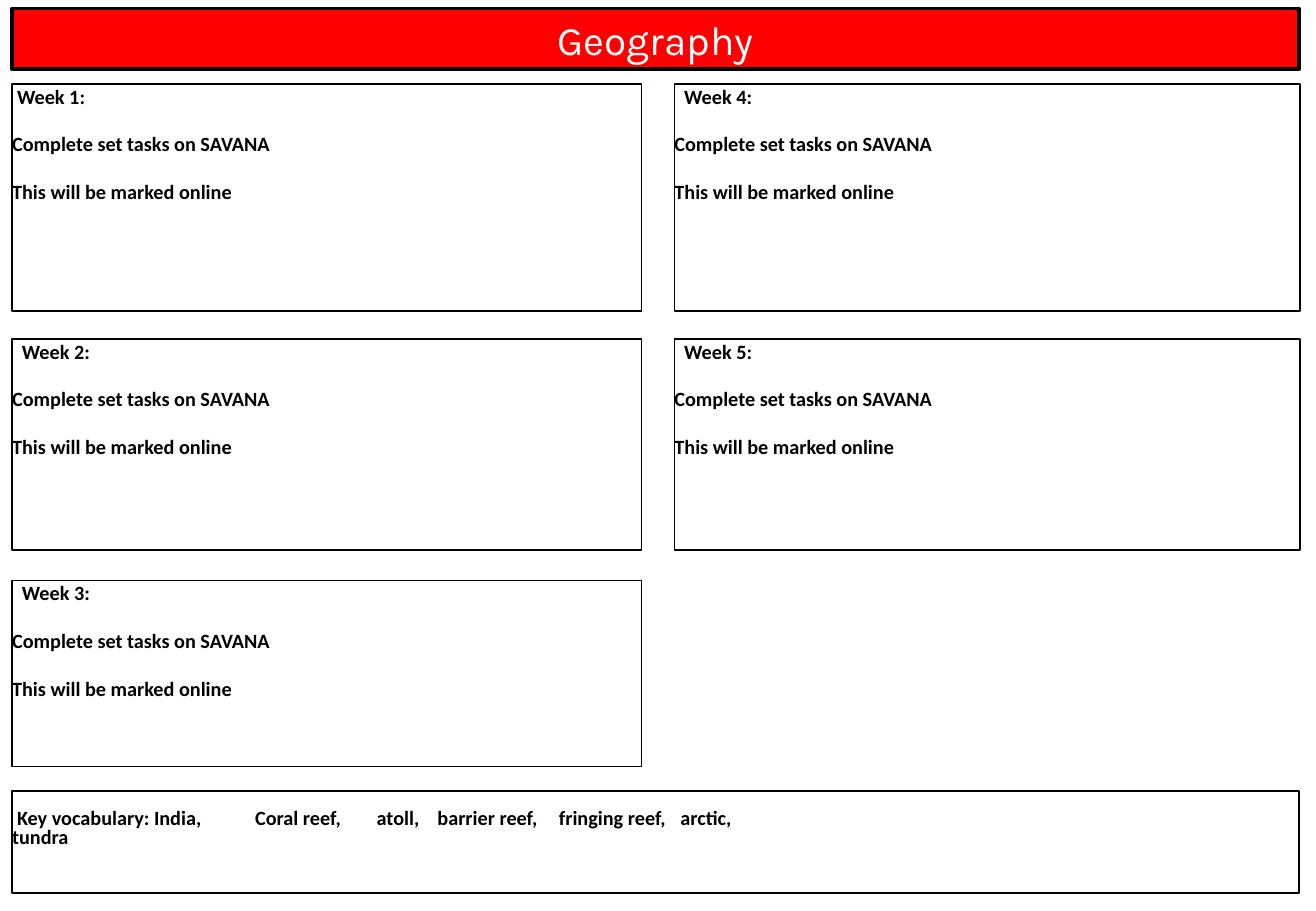
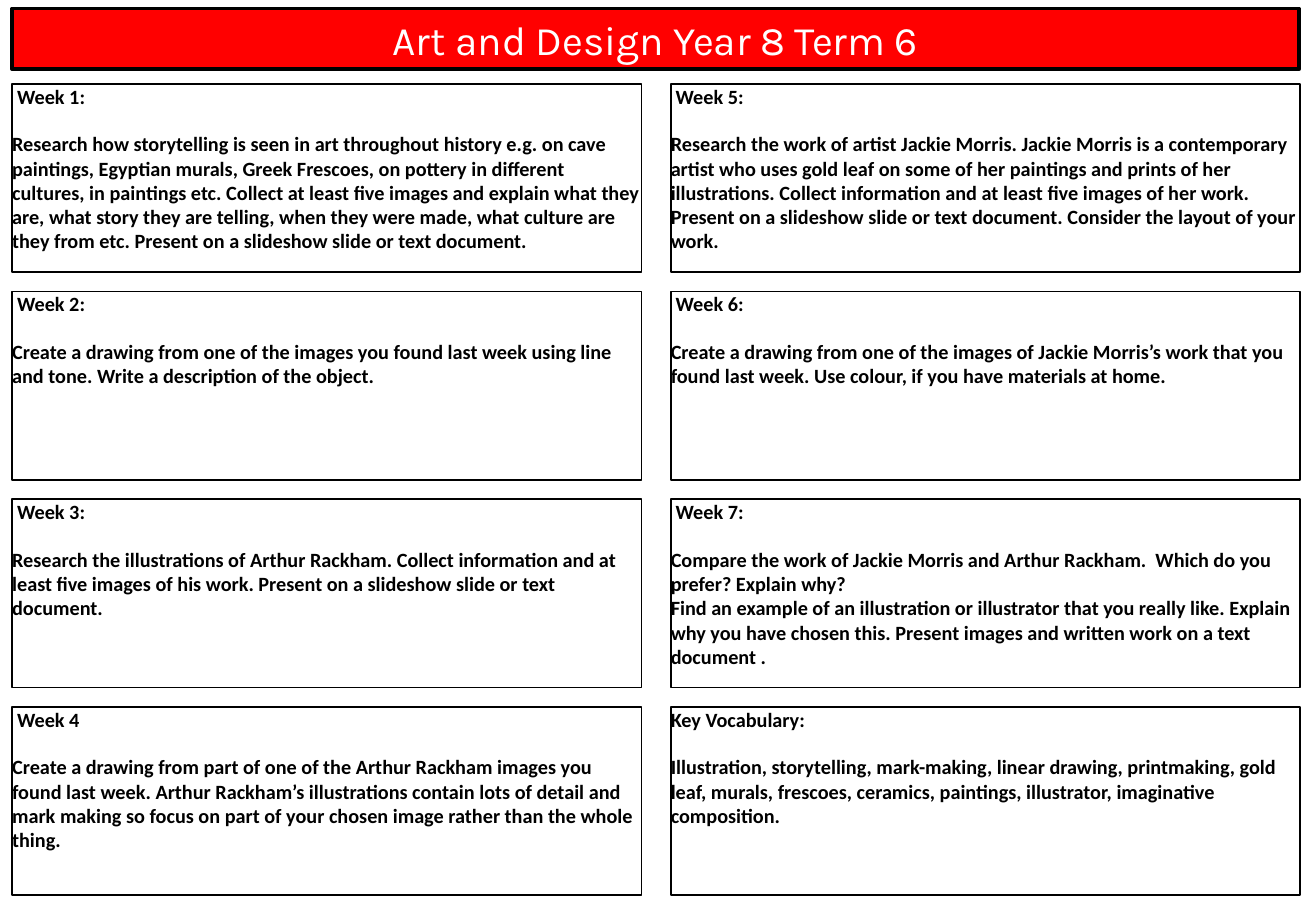
from pptx import Presentation
from pptx.dml.color import RGBColor
from pptx.enum.shapes import MSO_SHAPE as Shape
from pptx.enum.text import MSO_ANCHOR as Anchor, MSO_AUTO_SIZE as AutoSize, PP_ALIGN as Align
from pptx.util import Inches, Pt
from lxml import etree

BLACK = RGBColor(0x00, 0x00, 0x00)
RED = RGBColor(0xFF, 0x00, 0x00)
WHITE = RGBColor(0xFF, 0xFF, 0xFF)

TITLE_ONLY = 5
LEFT, FULL_WIDTH, COLUMN_WIDTH = 0.1, 10.59, 5.18

ONLINE_TASKS = ["Complete set tasks on SAVANA", "This will be marked online"]
GEOGRAPHY_COLUMNS = [(LEFT, COLUMN_WIDTH, [1, 2, 3]), (5.55, 5.15, [4, 5])]
GEOGRAPHY_ROWS = [(0.69, 1.87), (2.79, 1.74), (4.78, 1.53)]
GEOGRAPHY_WORDS = ("Key vocabulary: India,\tCoral reef,\tatoll,\tbarrier reef,"
                   "\tfringing reef,\tarctic,\vtundra")

ART_TOP, ART_PITCH, ART_HEIGHT = 0.69, 1.71, 1.55
ART_COLUMNS = [
    (LEFT, [
        ("Week 1:", "Research how storytelling is seen in art throughout history e.g. on cave "
         "paintings, Egyptian murals, Greek Frescoes, on pottery in different cultures, in "
         "paintings etc. Collect at least five images and explain what they are, what story "
         "they are telling, when they were made, what culture are they from etc. Present on "
         "a slideshow slide or text document."),
        ("Week 2:", "Create a drawing from one of the images you found last week using line "
         "and tone. Write a description of the object."),
        ("Week 3:", "Research the illustrations of Arthur Rackham. Collect information and at "
         "least five images of his work. Present on a slideshow slide or text document."),
        ("Week 4", "Create a drawing from part of one of the Arthur Rackham images you found "
         "last week. Arthur Rackham’s illustrations contain lots of detail and mark making "
         "so focus on part of your chosen image rather than the whole thing."),
    ]),
    (5.52, [
        ("Week 5:", "Research the work of artist Jackie Morris. Jackie Morris is a "
         "contemporary artist who uses gold leaf on some of her paintings and prints of her "
         "illustrations. Collect information and at least five images of her work. Present "
         "on a slideshow slide or text document. Consider the layout of your work."),
        ("Week 6:", "Create a drawing from one of the images of Jackie Morris’s work that you "
         "found last week. Use colour, if you have materials at home."),
        ("Week 7:", "Compare the work of Jackie Morris and Arthur Rackham.  Which do you "
         "prefer? Explain why?\vFind an example of an illustration or illustrator that you "
         "really like. Explain why you have chosen this. Present images and written work on "
         "a text document ."),
        ("Key Vocabulary:", "Illustration, storytelling, mark-making, linear drawing, "
         "printmaking, gold leaf, murals, frescoes, ceramics, paintings, illustrator, "
         "imaginative composition."),
    ]),
]


class HomeworkDeck:
    """Holds the shared homework style and the slide being built."""

    def __init__(self):
        self.presentation = Presentation()
        self.presentation.slide_width = Inches(10.83)
        self.presentation.slide_height = Inches(7.5)
        self.slide = None

    def add_slide(self, title):
        layout = self.presentation.slide_layouts[TITLE_ONLY]
        self.slide = self.presentation.slides.add_slide(layout)
        banner = self.slide.shapes.title
        banner.left, banner.top = Inches(LEFT), Inches(0.07)
        banner.width, banner.height = Inches(FULL_WIDTH), Inches(0.5)
        banner.fill.solid()
        banner.fill.fore_color.rgb = RED
        self.outline(banner, 2.25)
        text_frame = banner.text_frame
        text_frame.text = title
        text_frame.auto_size = AutoSize.NONE
        text_frame.vertical_anchor = Anchor.TOP
        paragraph = text_frame.paragraphs[0]
        paragraph.alignment = Align.CENTER
        self.style(paragraph, "Karla", 24, WHITE, False)

    def outline(self, shape, width):
        shape.line.color.rgb = BLACK
        shape.line.width = Pt(width)

    def style(self, paragraph, name, size, color, bold):
        for run in paragraph.runs:
            run.font.name = name
            run.font.size = Pt(size)
            run.font.color.rgb = color
            run.font.bold = bold

    def box(self, left, top, width, height, lines, indent=0.04):
        shape = self.slide.shapes.add_shape(
            Shape.RECTANGLE, Inches(left), Inches(top), Inches(width), Inches(height))
        shape.shadow.inherit = False
        shape.fill.background()
        self.outline(shape, 1)
        text_frame = shape.text_frame
        text_frame.word_wrap = True
        text_frame.vertical_anchor = Anchor.TOP
        text_frame.margin_left = text_frame.margin_right = 0
        text_frame.margin_top = text_frame.margin_bottom = 0
        text_frame.text = "\n".join(lines)
        for index, paragraph in enumerate(text_frame.paragraphs):
            paragraph.alignment = Align.LEFT
            if index:
                paragraph.space_before = Pt(13.9)
            else:
                paragraph._p.get_or_add_pPr().set("indent", str(Inches(indent)))
            self.style(paragraph, "Calibri", 12, BLACK, True)
        return text_frame

    def vocabulary(self, words):
        text_frame = self.box(LEFT, 6.51, FULL_WIDTH, 0.84, [words])
        text_frame.margin_top = Inches(0.16)
        paragraph = text_frame.paragraphs[0]
        paragraph.line_spacing = Pt(11.5)
        properties = paragraph._p.get_or_add_pPr()
        namespace = "{http://schemas.openxmlformats.org/drawingml/2006/main}"
        tabs = etree.SubElement(properties, namespace + "tabLst")
        for position in range(2, 11, 2):
            etree.SubElement(tabs, namespace + "tab", pos=str(Inches(position)), algn="l")


def main():
    deck = HomeworkDeck()

    deck.add_slide("Geography")
    for left, width, weeks in GEOGRAPHY_COLUMNS:
        for week, (top, height) in zip(weeks, GEOGRAPHY_ROWS):
            indent = 0.04 if week == 1 else 0.08
            deck.box(left, top, width, height, [f"Week {week}:", *ONLINE_TASKS], indent)
    deck.vocabulary(GEOGRAPHY_WORDS)

    deck.add_slide("Art and Design Year 8 Term 6")
    for left, tasks in ART_COLUMNS:
        for row, (heading, task) in enumerate(tasks):
            indent = 0.04 if heading.startswith("Week") else 0
            deck.box(left, ART_TOP + row * ART_PITCH, COLUMN_WIDTH, ART_HEIGHT,
                     [heading, task], indent)

    deck.presentation.save("out.pptx")


if __name__ == "__main__":
    main()
